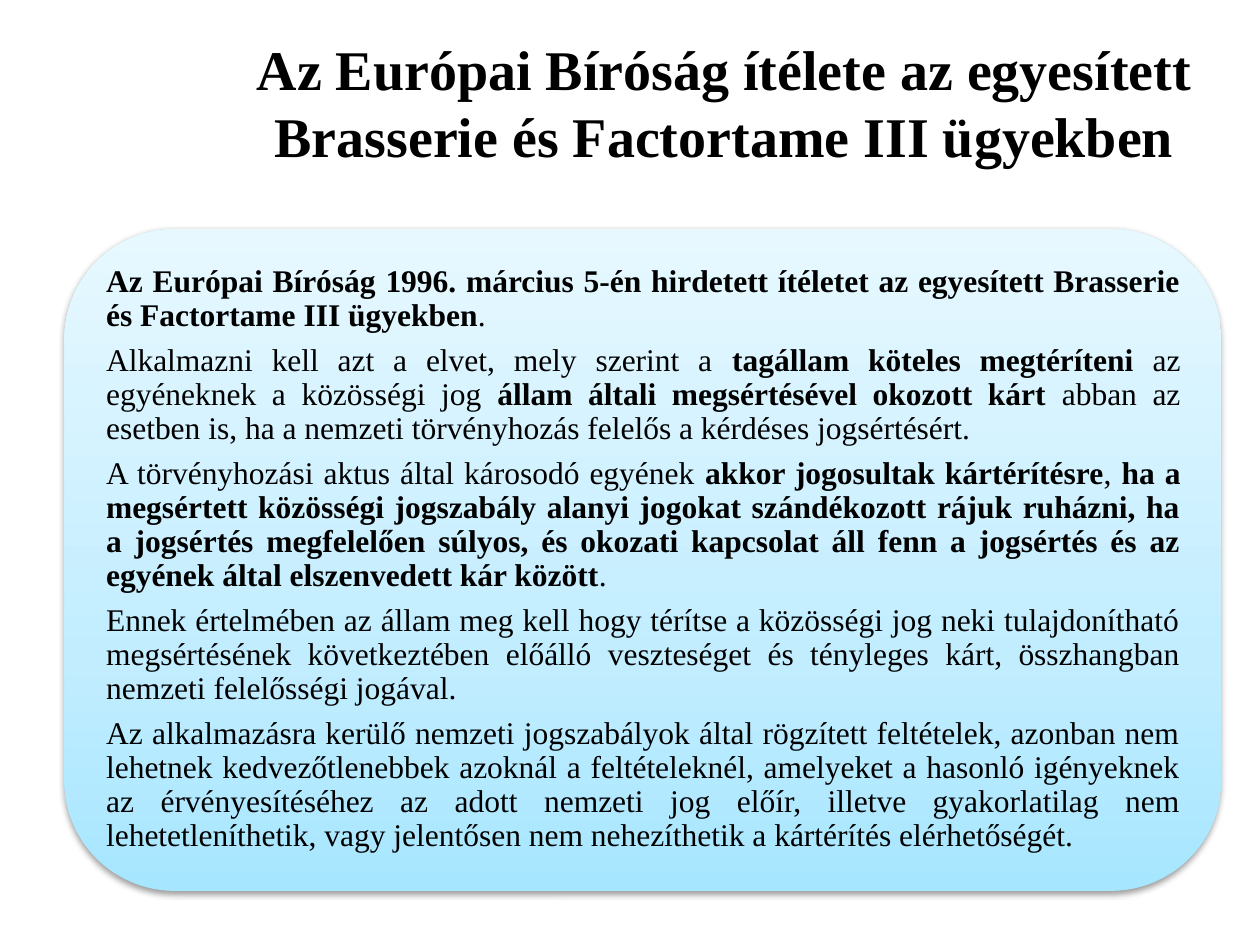
import dataclasses

import lxml.etree
import pptx
import pptx.dml.color
import pptx.enum.shapes
import pptx.enum.text
import pptx.oxml.ns
import pptx.util

Cm = pptx.util.Cm
Pt = pptx.util.Pt
Align = pptx.enum.text.PP_ALIGN
qn = pptx.oxml.ns.qn


@dataclasses.dataclass(frozen=True)
class Theme:
    font: str = "Times New Roman"
    text: str = "000000"
    shadow: str = "000000"
    panel_stops: tuple = ((0, "A7E6FF"), (35, "C1EDFF"), (100, "E7F8FF"))
    title_size: int = 32
    body_size: int = 18
    body_gap: float = 6.3


TITLE = "Az Európai Bíróság ítélete az egyesített Brasserie és Factortame III ügyekben"

# Double asterisks switch bold on and off.
RULING = [
    "**Az Európai Bíróság 1996. március 5-én hirdetett ítéletet az egyesített "
    "Brasserie és Factortame III ügyekben**.",
    "Alkalmazni kell azt a elvet, mely szerint a **tagállam köteles megtéríteni **az "
    "egyéneknek a közösségi jog **állam általi megsértésével okozott kárt **abban az "
    "esetben is, ha a nemzeti törvényhozás felelős a kérdéses jogsértésért.",
    "A törvényhozási aktus által károsodó egyének **akkor jogosultak kártérítésre**, "
    "**ha a megsértett közösségi jogszabály alanyi jogokat szándékozott rájuk ruházni, "
    "ha a jogsértés megfelelően súlyos, és okozati kapcsolat áll fenn a jogsértés és az "
    "egyének által elszenvedett kár között**. ",
    "Ennek értelmében az állam meg kell hogy térítse a közösségi jog neki tulajdonítható "
    "megsértésének következtében előálló veszteséget és tényleges kárt, összhangban "
    "nemzeti felelősségi jogával. ",
    "Az alkalmazásra kerülő nemzeti jogszabályok által rögzített feltételek, azonban nem "
    "lehetnek kedvezőtlenebbek azoknál a feltételeknél, amelyeket a hasonló igényeknek az "
    "érvényesítéséhez az adott nemzeti jog előír, illetve gyakorlatilag nem "
    "lehetetleníthetik, vagy jelentősen nem nehezíthetik a kártérítés elérhetőségét.",
]


def write_paragraph(para, text, *, theme, size, align, bold=False, spacing=None, after=None):
    para.alignment = align
    para.line_spacing = spacing
    para.space_after = after
    for index, part in enumerate(text.split("**")):
        if part:
            span = para.add_run()
            span.text = part
            span.font.name = theme.font
            span.font.size = Pt(size)
            span.font.bold = bold or index % 2 == 1
            span.font.color.rgb = pptx.dml.color.RGBColor.from_string(theme.text)


class SlideBuilder:
    def __init__(self, deck, theme):
        self.theme = theme
        self.page = deck.slides.add_slide(deck.slide_layouts[0])
        subtitle = self.page.placeholders[1].element
        subtitle.getparent().remove(subtitle)

    def title(self, text, left, top, width, height):
        box = self.page.shapes.title
        box.left, box.top, box.width, box.height = map(Cm, (left, top, width, height))
        box.text_frame.vertical_anchor = pptx.enum.text.MSO_ANCHOR.MIDDLE
        write_paragraph(box.text_frame.paragraphs[0], text, theme=self.theme,
                        size=self.theme.title_size, align=Align.CENTER, bold=True)

    def group(self):
        return self.page.shapes.add_group_shape().shapes

    def panel(self, shapes, left, top, width, height):
        kind = pptx.enum.shapes.MSO_SHAPE.ROUNDED_RECTANGLE
        box = shapes.add_shape(kind, *map(Cm, (left, top, width, height)))
        box.line.fill.background()
        box.fill.gradient()
        box.fill.gradient_angle = 90
        stops = box.element.spPr.find(".//" + qn("a:gsLst"))
        for stop in list(stops):
            stops.remove(stop)
        for position, color in self.theme.panel_stops:
            stop = lxml.etree.SubElement(stops, qn("a:gs"), pos=str(position * 1000))
            lxml.etree.SubElement(stop, qn("a:srgbClr"), val=color)
        box.shadow.inherit = False
        effects = box.element.spPr.find(qn("a:effectLst"))
        shadow = lxml.etree.SubElement(
            effects, qn("a:outerShdw"), blurRad=str(Pt(3.1)), dist=str(Pt(1.6)),
            dir="5400000", rotWithShape="0")
        color = lxml.etree.SubElement(shadow, qn("a:srgbClr"), val=self.theme.shadow)
        lxml.etree.SubElement(color, qn("a:alpha"), val="38000")

    def prose(self, shapes, texts, left, top, width, height):
        frame = shapes.add_textbox(*map(Cm, (left, top, width, height))).text_frame
        frame.word_wrap = True
        frame.vertical_anchor = pptx.enum.text.MSO_ANCHOR.MIDDLE
        frame.margin_left = frame.margin_right = Cm(0.18)
        frame.margin_top = frame.margin_bottom = Cm(0.18)
        for index, text in enumerate(texts):
            para = frame.add_paragraph() if index else frame.paragraphs[0]
            write_paragraph(para, text, theme=self.theme, size=self.theme.body_size,
                            align=Align.JUSTIFY, spacing=0.9,
                            after=Pt(self.theme.body_gap))


def main():
    deck = pptx.Presentation()
    deck.slide_width, deck.slide_height = Cm(25.4), Cm(19.05)
    builder = SlideBuilder(deck, Theme())
    builder.title(TITLE, 3.81, 0, 21.59, 4.09)
    ruling = builder.group()
    builder.panel(ruling, 1.3, 4.62, 23.32, 13.34)
    builder.prose(ruling, RULING, 1.96, 5.26, 22.02, 12.04)
    deck.save("out.pptx")


if __name__ == "__main__":
    main()
